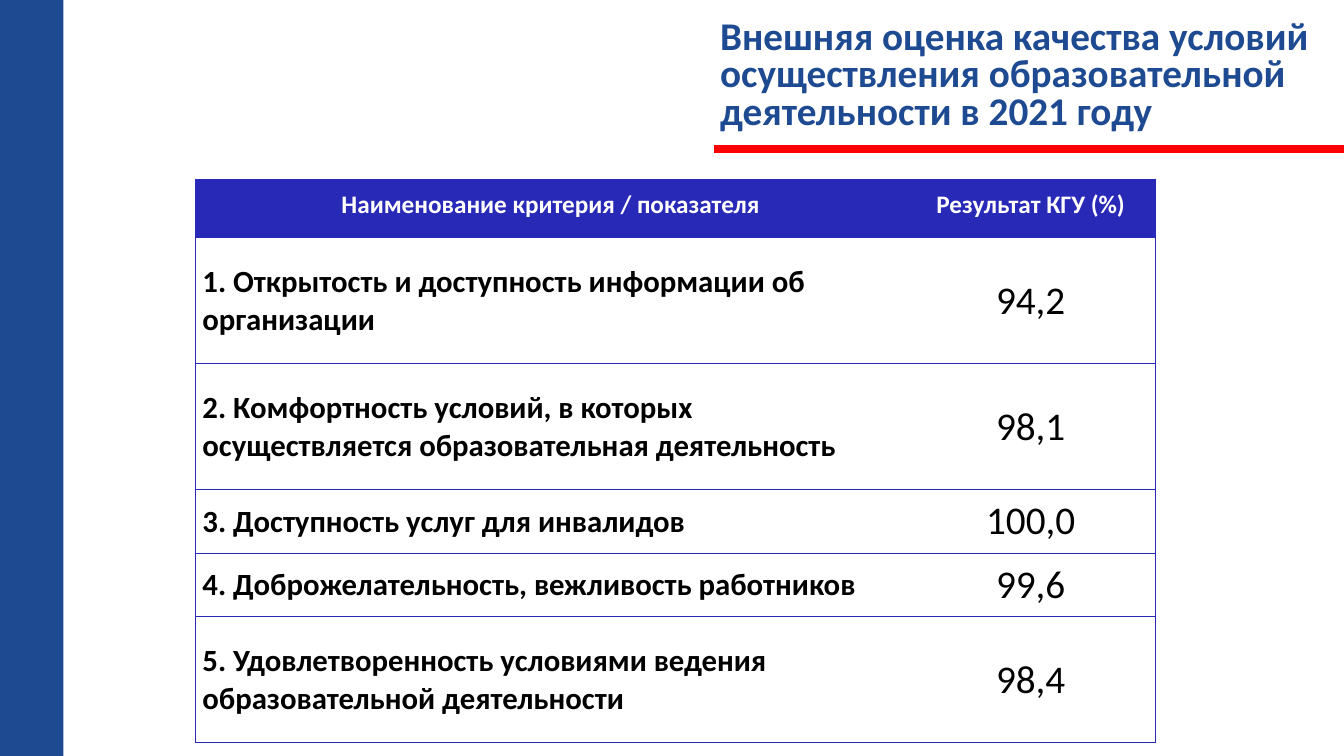
from lxml import etree
from pptx import Presentation
from pptx import util as u
from pptx.dml.color import RGBColor
from pptx.enum import shapes, text
from pptx.oxml import ns

NAVY = RGBColor(0x1E, 0x4A, 0x91)
INDIGO = RGBColor(0x29, 0x29, 0xB8)
RED = RGBColor(0xFF, 0, 0)
WHITE = RGBColor(0xFF, 0xFF, 0xFF)
BLACK = RGBColor(0, 0, 0)

TITLE = "Внешняя оценка качества условий осуществления образовательной деятельности в 2021 году"
HEADERS = ("Наименование критерия / показателя", "Результат КГУ (%)")
CRITERIA = (
    ("1. Открытость и доступность информации об организации", "94,2", 1.25),
    ("2. Комфортность условий, в которых осуществляется образовательная деятельность", "98,1", 1.25),
    ("3. Доступность услуг для инвалидов", "100,0", 0.63),
    ("4. Доброжелательность, вежливость работников", "99,6", 0.63),
    ("5. Удовлетворенность условиями ведения образовательной деятельности", "98,4", 1.25),
)
HEADER_HEIGHT = 0.58
COLUMN_WIDTHS = (7.05, 2.48)


def add_span(para, words, size, color, bold=True):
    span = para.add_run()
    span.text = words
    span.font.name = "Calibri"
    span.font.size = u.Pt(size)
    span.font.bold = bold
    span.font.color.rgb = color


def add_rule(page):
    y = u.Inches(1.48)
    rule = page.shapes.add_connector(
        shapes.MSO_CONNECTOR.STRAIGHT, u.Inches(7.09), y, u.Inches(13.34), y)
    rule.line.color.rgb = RED
    rule.line.width = u.Pt(6)
    etree.SubElement(rule._element.spPr, ns.qn("a:effectLst"))


def add_title(page):
    box = page.shapes.add_textbox(
        u.Inches(7.05), u.Inches(0.15), u.Inches(6.06), u.Inches(1.24))
    box.text_frame.word_wrap = True
    box.text_frame.auto_size = text.MSO_AUTO_SIZE.SHAPE_TO_FIT_TEXT
    para = box.text_frame.paragraphs[0]
    para.line_spacing = 0.8
    add_span(para, TITLE, 28, NAVY)


def add_side_band(page):
    band = page.shapes.add_shape(
        shapes.MSO_SHAPE.RECTANGLE, 0, 0, u.Inches(0.63), u.Inches(7.52))
    band.shadow.inherit = False
    band.fill.solid()
    band.fill.fore_color.rgb = NAVY
    band.line.fill.background()


def set_borders(cell, visible):
    properties = cell._tc.get_or_add_tcPr()
    for side in "LRTB":
        border = etree.SubElement(properties, ns.qn(f"a:ln{side}"), w=str(u.Pt(0.75)))
        if side in visible:
            fill = etree.SubElement(border, ns.qn("a:solidFill"))
            etree.SubElement(fill, ns.qn("a:srgbClr"), val=str(INDIGO))
        else:
            etree.SubElement(border, ns.qn("a:noFill"))


def fill_cell(cell, words, size, color, fill, visible, bold=True, centered=True):
    set_borders(cell, visible)
    cell.fill.solid()
    cell.fill.fore_color.rgb = fill
    cell.vertical_anchor = text.MSO_ANCHOR.MIDDLE
    cell.margin_left = cell.margin_right = u.Inches(0.07)
    cell.margin_top = cell.margin_bottom = 0
    para = cell.text_frame.paragraphs[0]
    if centered:
        para.alignment = text.PP_ALIGN.CENTER
    add_span(para, words, size, color, bold)
    return para


def add_results_table(page):
    heights = [HEADER_HEIGHT] + [height for _, _, height in CRITERIA]
    table = page.shapes.add_table(
        len(heights), len(COLUMN_WIDTHS), u.Inches(1.94), u.Inches(1.78),
        u.Inches(sum(COLUMN_WIDTHS)), u.Inches(sum(heights))).table
    table.first_row = table.horz_banding = False
    for column, width in zip(table.columns, COLUMN_WIDTHS):
        column.width = u.Inches(width)
    for row, height in zip(table.rows, heights):
        row.height = u.Inches(height)
    for index, (words, visible) in enumerate(zip(HEADERS, ("LTB", "RTB"))):
        para = fill_cell(table.cell(0, index), words, 18, WHITE, INDIGO, visible)
        para.line_spacing = u.Pt(16.1)
    for index, (name, value, _) in enumerate(CRITERIA, 1):
        fill_cell(table.cell(index, 0), name, 22, BLACK, WHITE, "LTB", centered=False)
        fill_cell(table.cell(index, 1), value, 28, BLACK, WHITE, "RTB", bold=False)


def main():
    deck = Presentation()
    deck.slide_width = u.Inches(13.34)
    deck.slide_height = u.Inches(7.5)
    page = deck.slides.add_slide(deck.slide_layouts[6])
    add_rule(page)
    add_title(page)
    add_side_band(page)
    add_results_table(page)
    deck.save("out.pptx")


if __name__ == "__main__":
    main()
